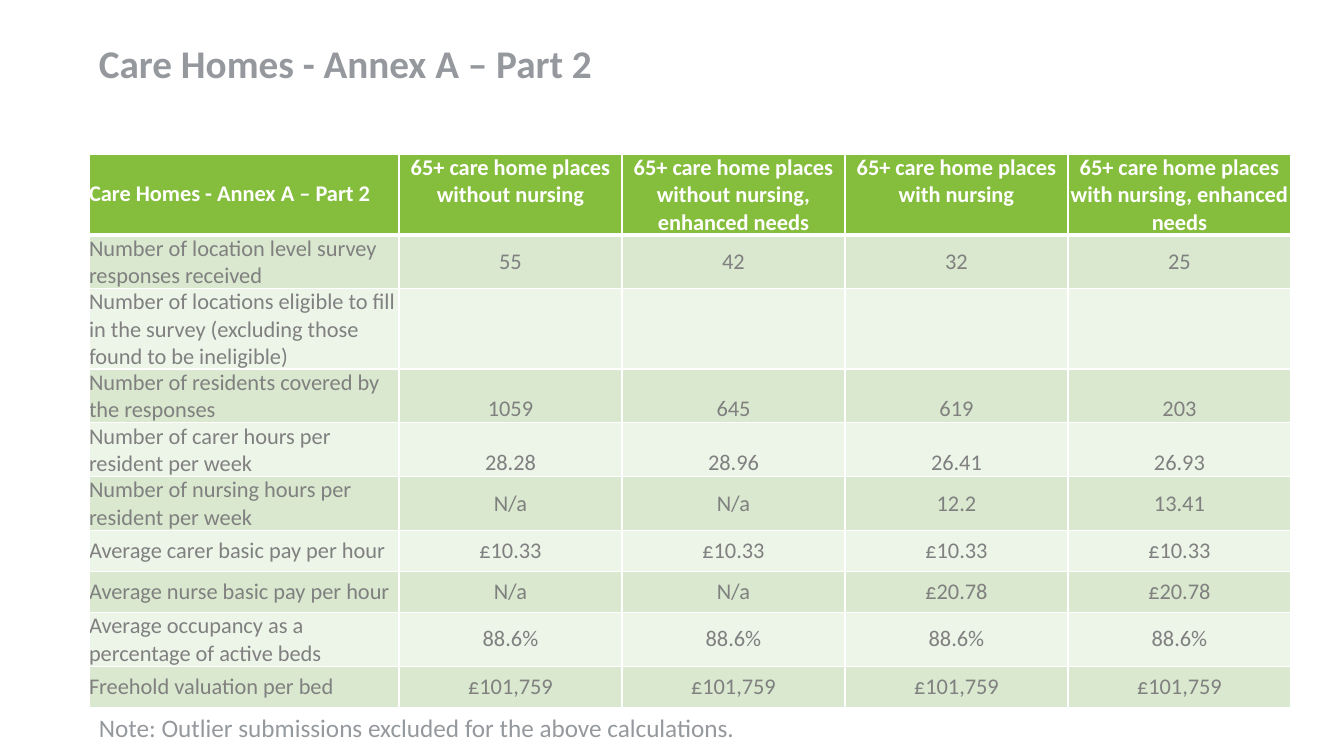
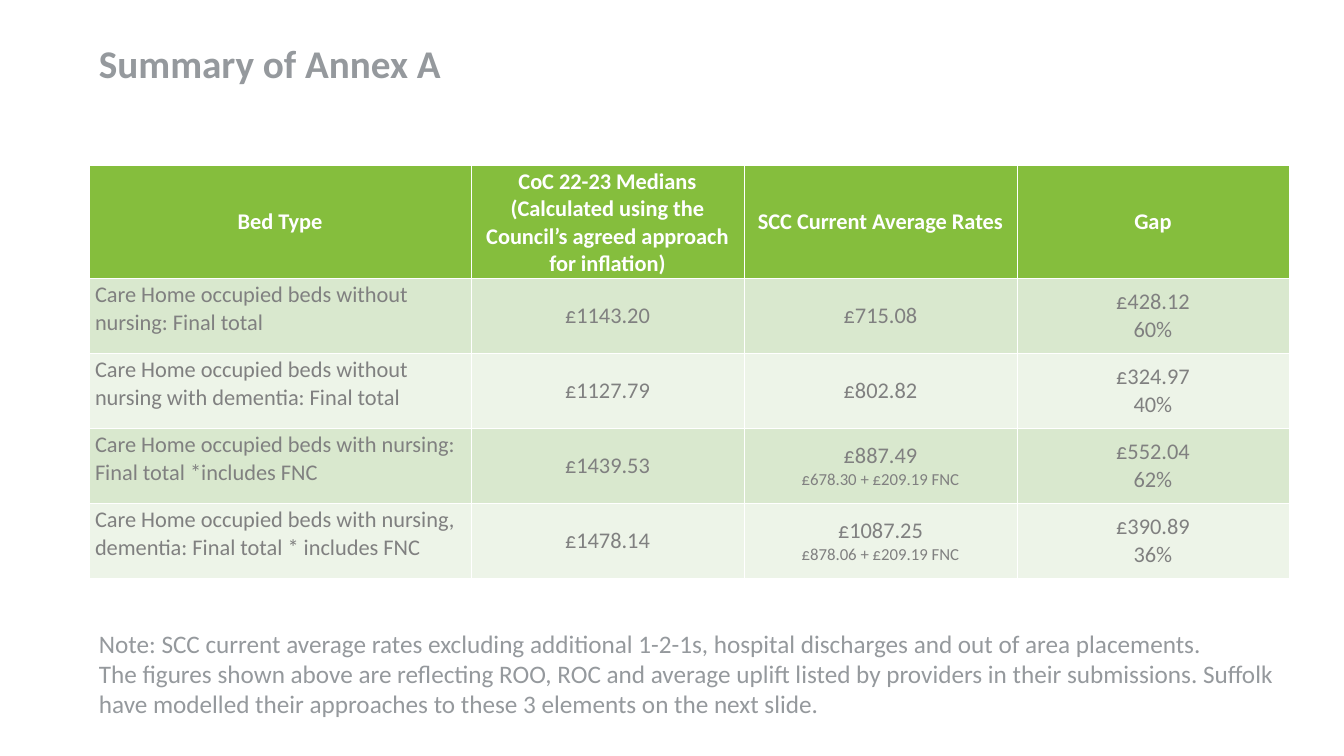
import pptx
import pptx.util
import pptx.dml.color
import pptx.enum.text
import pptx.oxml
import pptx.oxml.ns

RGB = pptx.dml.color.RGBColor
GREY = RGB(0x95, 0x99, 0x9D)
TEXT = RGB(0x80, 0x80, 0x80)
WHITE = RGB(0xFF, 0xFF, 0xFF)
GREEN = RGB(0x85, 0xBE, 0x3D)
BANDS = RGB(0xD9, 0xE8, 0xCE), RGB(0xED, 0xF4, 0xE8)

FONT = "Calibri"
SCALE = 914400 / 100.8  # EMU in one px
LEFT = 89

LEAD = pptx.enum.text.PP_ALIGN.LEFT
MID = pptx.enum.text.PP_ALIGN.CENTER
HIGH = pptx.enum.text.MSO_ANCHOR.TOP
EVEN = pptx.enum.text.MSO_ANCHOR.MIDDLE
LOW = pptx.enum.text.MSO_ANCHOR.BOTTOM

# Content: "\v" breaks a line, "\n" starts a small second paragraph.
# Each column is width, head align, head anchor, body align, body anchor, pad;
# a pad is (side, top and bottom) in px, and "low" lists bottom-set rows.
PLACE = (223, MID, HIGH, MID, EVEN, (0, 0))
SLIDES = [
    {
        "title": "Care Homes - Annex A – Part 2",
        "top": 154, "head": 51, "row": 41, "line": 1, "rule": 3,
        "pad": (0, 0), "low": (3, 4),
        "cols": [(310, LEAD, EVEN, LEAD, EVEN, (0, 0))] + [PLACE] * 4,
        "rows": [
            ("Care Homes - Annex A – Part 2",
             "65+ care home places without nursing",
             "65+ care home places without nursing, enhanced needs",
             "65+ care home places with nursing",
             "65+ care home places with nursing, enhanced needs"),
            ("Number of location level survey responses received",
             "55", "42", "32", "25"),
            ("Number of locations eligible to fill in the survey "
             "(excluding those found to be ineligible)", "", "", "", ""),
            ("Number of residents covered by the responses",
             "1059", "645", "619", "203"),
            ("Number of carer hours per resident per week",
             "28.28", "28.96", "26.41", "26.93"),
            ("Number of nursing hours per resident per week",
             "N/a", "N/a", "12.2", "13.41"),
            ("Average carer basic pay per hour",
             "£10.33", "£10.33", "£10.33", "£10.33"),
            ("Average nurse basic pay per hour",
             "N/a", "N/a", "£20.78", "£20.78"),
            ("Average occupancy as a percentage of active beds",
             "88.6%", "88.6%", "88.6%", "88.6%"),
            ("Freehold valuation per bed",
             "£101,759", "£101,759", "£101,759", "£101,759"),
        ],
        "note": (707, 1138, 40,
                 "Note: Outlier submissions excluded for the above "
                 "calculations."),
    },
    {
        "title": "Summary of Annex A",
        "top": 165, "head": 75, "row": 75, "line": 0.5, "rule": 1.52,
        "pad": (6, 3), "low": (),
        "cols": [(382, MID, EVEN, LEAD, HIGH, (6, 3)),
                 (273, MID, EVEN, MID, EVEN, (0, 0)),
                 (273, MID, EVEN, MID, EVEN, (7, 0)),
                 (272, MID, EVEN, MID, EVEN, (6, 3))],
        "rows": [
            ("Bed Type",
             "CoC 22-23 Medians (Calculated using the Council’s agreed "
             "approach for inflation)",
             "SCC Current Average Rates", "Gap"),
            ("Care Home occupied beds without nursing: Final total",
             "£1143.20", "£715.08", "£428.12\v60%"),
            ("Care Home occupied beds without nursing with dementia: "
             "Final total",
             "£1127.79", "£802.82", "£324.97\v40%"),
            ("Care Home occupied beds with nursing: Final total "
             "*includes FNC",
             "£1439.53", "£887.49\n£678.30 + £209.19 FNC",
             "£552.04\v62%"),
            ("Care Home occupied beds with nursing, dementia: Final total "
             "* includes FNC",
             "£1478.14", "£1087.25\n£878.06 + £209.19 FNC",
             "£390.89\v36%"),
        ],
        "note": (623, 1213, 102,
                 "Note: SCC current average rates excluding additional "
                 "1-2-1s, hospital discharges and out of area placements."
                 "\vThe figures shown above are reflecting ROO, ROC and "
                 "average uplift listed by providers in their submissions. "
                 "Suffolk have modelled their approaches to these 3 elements "
                 "on the next slide."),
    },
]


def px(n):
    return pptx.util.Emu(round(n * SCALE))


def style(para, size, color, bold=False):
    font = para.font
    font.name, font.size, font.bold = FONT, pptx.util.Pt(size), bold
    font.color.rgb = color


def label(slide, top, width, height, text, size, bold=False):
    box = slide.shapes.add_textbox(px(LEFT), px(top), px(width), px(height))
    frame = box.text_frame
    frame.word_wrap = True
    frame.text = text
    para = frame.paragraphs[0]
    style(para, size, GREY, bold)
    return para


def border(cell, top, side, base):
    props = cell._tc.get_or_add_tcPr()
    for edge, width in zip("LRTB", (side, side, top, base)):
        props.append(pptx.oxml.parse_xml(
            f'<a:ln{edge} {pptx.oxml.ns.nsdecls("a")} '
            f'w="{pptx.util.Pt(width)}"><a:solidFill>'
            f'<a:srgbClr val="{WHITE}"/></a:solidFill></a:ln{edge}>'))


def fill_cell(cell, text, color, back, align, anchor, pad, bold):
    cell.fill.solid()
    cell.fill.fore_color.rgb = back
    cell.vertical_anchor = anchor
    cell.margin_left = cell.margin_right = px(pad[0])
    cell.margin_top = cell.margin_bottom = px(pad[1])
    cell.text_frame.text = text
    for i, para in enumerate(cell.text_frame.paragraphs):
        para.alignment = align
        style(para, 12 if i else 16, color, bold)


def grid(slide, data):
    rows, cols = data["rows"], data["cols"]
    high = [data["head"]] + [data["row"]] * (len(rows) - 1)
    table = slide.shapes.add_table(
        len(rows), len(cols), px(LEFT), px(data["top"]),
        px(sum(col[0] for col in cols)), px(sum(high))).table
    table.horz_banding = False
    for c, col in enumerate(cols):
        table.columns[c].width = px(col[0])
    for r, row in enumerate(rows):
        table.rows[r].height = px(high[r])
        for c, text in enumerate(row):
            cell = table.cell(r, c)
            line, rule = data["line"], data["rule"]
            border(cell, rule if r == 1 else line, line,
                   rule if r == 0 else line)
            _, top_al, top_anc, align, anchor, pad = cols[c]
            if r == 0:
                fill_cell(cell, text, WHITE, GREEN, top_al, top_anc,
                          data["pad"], True)
            else:
                if r in data["low"] and c:
                    anchor, pad = LOW, (1, 0)
                fill_cell(cell, text, TEXT, BANDS[(r - 1) % 2], align,
                          anchor, pad, False)


def main():
    deck = pptx.Presentation()
    deck.slide_width, deck.slide_height = px(1344), px(756)
    for data in SLIDES:
        slide = deck.slides.add_slide(deck.slide_layouts[6])
        title = label(slide, 40, 919, 99, data["title"], 28, True)
        title.line_spacing = 0.9
        grid(slide, data)
        label(slide, *data["note"], 18)
    deck.save("out.pptx")


if __name__ == "__main__":
    main()
